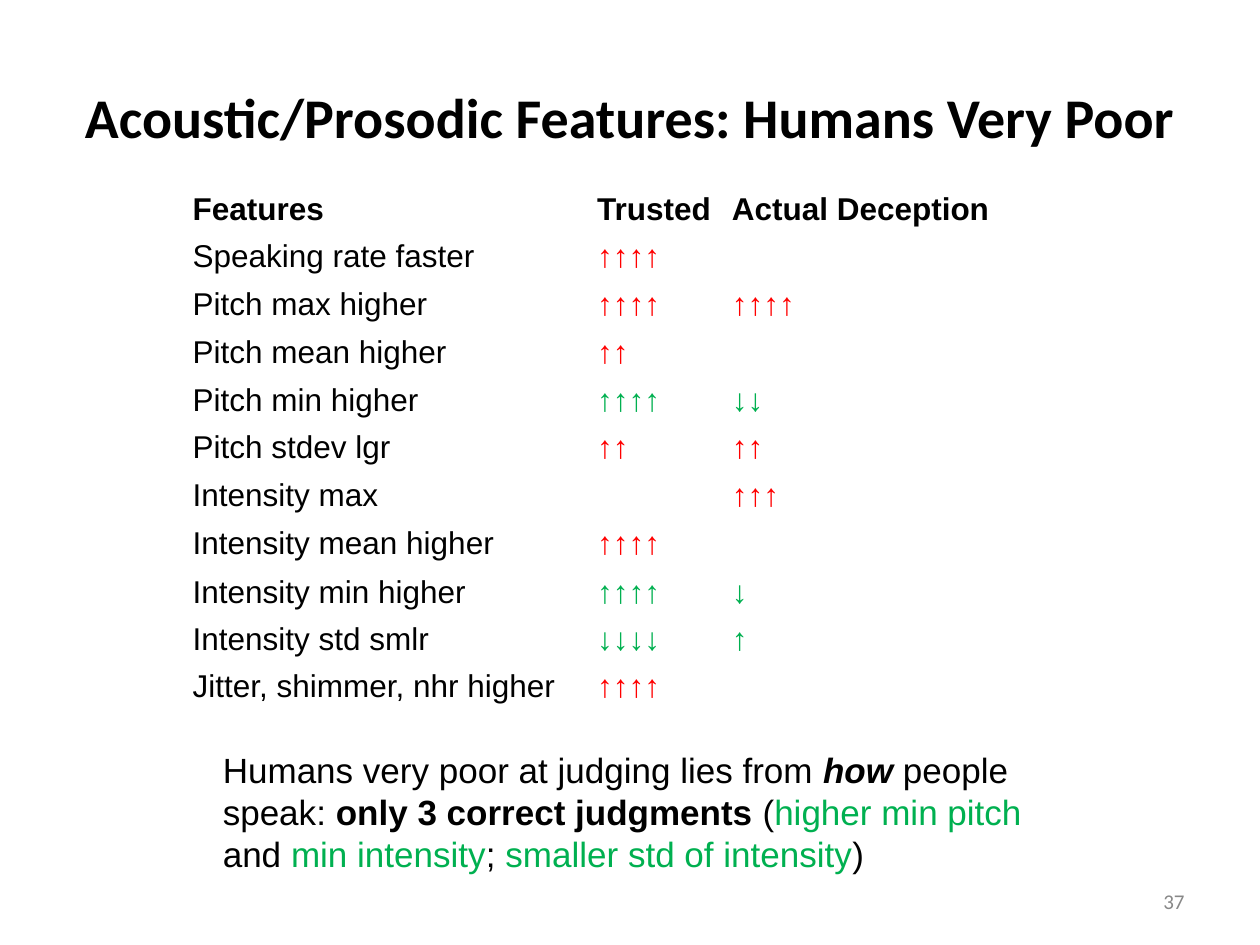
from typing import NamedTuple

from pptx import Presentation
from pptx import util as u
from pptx.dml.color import RGBColor
from pptx.enum import text

BLACK = RGBColor(0x00, 0x00, 0x00)
RED = RGBColor(0xFF, 0x00, 0x00)
GREEN = RGBColor(0x00, 0xB0, 0x50)
GRAY = RGBColor(0x88, 0x88, 0x88)


class Span(NamedTuple):
    words: str
    color: RGBColor = BLACK
    bold: bool = False
    italic: bool = False


class Feature(NamedTuple):
    label: str
    trusted: str
    actual: str
    color: RGBColor = RED


HEADINGS = ("Features", "Trusted", "Actual Deception")
FEATURES = [
    Feature("Speaking rate faster", "↑↑↑↑", ""),
    Feature("Pitch max higher", "↑↑↑↑", "↑↑↑↑"),
    Feature("Pitch mean higher", "↑↑", ""),
    Feature("Pitch min higher", "↑↑↑↑", "↓↓", GREEN),
    Feature("Pitch stdev lgr", "↑↑", "↑↑"),
    Feature("Intensity max", "", "↑↑↑"),
    Feature("Intensity mean higher", "↑↑↑↑", ""),
    Feature("Intensity min higher", "↑↑↑↑", "↓", GREEN),
    Feature("Intensity std smlr", "↓↓↓↓", "↑", GREEN),
    Feature("Jitter, shimmer, nhr higher", "↑↑↑↑", ""),
]
CONCLUSION = [
    Span("Humans very poor at judging lies from "),
    Span("how", bold=True, italic=True),
    Span(" people speak: "),
    Span("only 3 correct judgments ", bold=True),
    Span("("),
    Span("higher min pitch ", GREEN),
    Span("and "),
    Span("min intensity", GREEN),
    Span("; "),
    Span("smaller std of intensity", GREEN),
    Span(")"),
]


def write(para, spans: list[Span], font: str, size: int) -> None:
    """Add formatted spans to a paragraph."""
    para.font.size = u.Pt(size)
    for span in spans:
        run = para.add_run()
        run.text = span.words
        run.font.color.rgb = span.color
        formats = {"name": font, "size": u.Pt(size),
                   "bold": span.bold, "italic": span.italic}
        for name, value in formats.items():
            setattr(run.font, name, value)


def place(shape, left: float, top: float, width: float, height: float) -> None:
    for name, value in {"left": left, "top": top, "width": width, "height": height}.items():
        setattr(shape, name, u.Inches(value))


def add_box(page, left: float, top: float, width: float, height: float):
    box = page.shapes.add_textbox(*map(u.Inches, (left, top, width, height)))
    box.text_frame.word_wrap = True
    return box.text_frame


def add_features(page) -> None:
    rows = [[Span(heading, bold=True) for heading in HEADINGS]]
    rows += [[Span(f.label), Span(f.trusted, f.color), Span(f.actual, f.color)]
             for f in FEATURES]
    frame = page.shapes.add_table(len(rows), len(HEADINGS), u.Inches(1.46), u.Inches(1.48),
                                  u.Inches(6.87), u.Inches(4.13))
    table = frame.table
    table.first_row = table.horz_banding = False
    for column, width in zip(table.columns, (3.21, 1.07, 2.59)):
        column.width = u.Inches(width)

    margins = {"margin_left": 0.07, "margin_right": 0.07,
               "margin_top": 0.04, "margin_bottom": 0.04}
    for row_index, row in enumerate(rows):
        for column_index, span in enumerate(row):
            cell = table.cell(row_index, column_index)
            cell.fill.background()
            for name, value in margins.items():
                setattr(cell, name, u.Inches(value))
            write(cell.text_frame.paragraphs[0], [span] if span.words else [], "Arial", 18)


def main() -> None:
    deck = Presentation()
    deck.slide_width, deck.slide_height = u.Inches(10), u.Inches(7.5)
    page = deck.slides.add_slide(deck.slide_layouts.get_by_name("Title Only"))

    # Title
    title = page.shapes.title
    place(title, 0.5, 0.3, 9, 1.25)
    title.text_frame.auto_size = text.MSO_AUTO_SIZE.NONE
    title.text_frame.vertical_anchor = text.MSO_ANCHOR.MIDDLE
    heading = title.text_frame.paragraphs[0]
    heading.alignment = text.PP_ALIGN.CENTER
    write(heading, [Span("Acoustic/Prosodic Features: Humans Very Poor", bold=True)],
          "Calibri", 32)

    # Feature comparison
    add_features(page)

    # Conclusion
    conclusion = add_box(page, 1.67, 5.89, 6.67, 1.11)
    conclusion.auto_size = text.MSO_AUTO_SIZE.SHAPE_TO_FIT_TEXT
    write(conclusion.paragraphs[0], CONCLUSION, "Arial", 20)

    # Page number
    number = add_box(page, 7.17, 6.95, 2.33, 0.4)
    number.vertical_anchor = text.MSO_ANCHOR.MIDDLE
    number.paragraphs[0].alignment = text.PP_ALIGN.RIGHT
    write(number.paragraphs[0], [Span("37", GRAY)], "Calibri", 12)

    deck.save("out.pptx")


if __name__ == "__main__":
    main()
